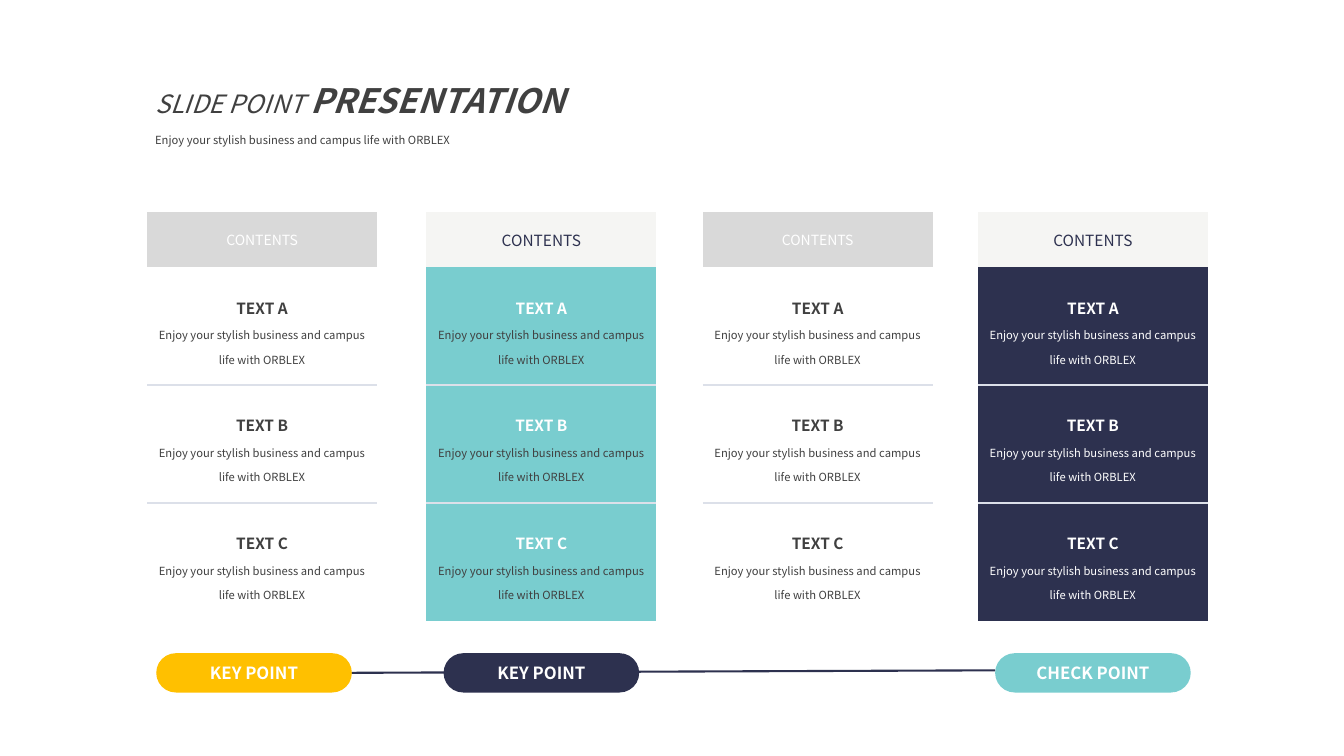
from lxml import etree
from pptx import Presentation
from pptx.dml.color import RGBColor
from pptx.enum.shapes import MSO_CONNECTOR, MSO_SHAPE
from pptx.enum.text import MSO_ANCHOR, MSO_AUTO_SIZE, PP_ALIGN
from pptx.oxml.ns import qn
from pptx.util import Inches, Pt

STRAIGHT = MSO_CONNECTOR.STRAIGHT
ROUNDED = MSO_SHAPE.ROUNDED_RECTANGLE
MIDDLE = MSO_ANCHOR.MIDDLE
CENTER = PP_ALIGN.CENTER
LEFT = PP_ALIGN.LEFT
GROW = MSO_AUTO_SIZE.SHAPE_TO_FIT_TEXT

FONT = "Noto Sans CJK KR"
NAVY, TEAL, YELLOW = "2D314F", "79CDCF", "FFC000"
WHITE, DARK, GRAY, PALE, RULE = "FFFFFF", "404040", "D9D9D9", "F5F5F3", "DCE0E9"
NO_STYLE = "{2D5ABB26-0587-4C30-8999-92F81FD0307C}"

TAGLINE = "Enjoy your stylish business and campus life with ORBLEX"
TOPICS = ["TEXT A", "TEXT B", "TEXT C"]
PLAIN = dict(header_fill=GRAY, header_color=WHITE, header_size=10,
             body_fill=None, topic_color=DARK, detail_color=DARK)
TEAL_PANEL = dict(header_fill=PALE, header_color=NAVY, header_size=11,
                  body_fill=TEAL, topic_color=WHITE, detail_color=DARK)
NAVY_PANEL = dict(TEAL_PANEL, body_fill=NAVY, detail_color=WHITE)
COLUMNS = [(1.46, PLAIN), (4.23, TEAL_PANEL), (6.97, PLAIN), (9.7, NAVY_PANEL)]


def rgb(value):
    return RGBColor.from_string(value)


def add_run(paragraph, text, size, color, bold=False, italic=False):
    run = paragraph.add_run()
    run.text = text
    font = run.font
    font.name, font.size, font.bold, font.italic = FONT, Pt(size), bold, italic
    font.color.rgb = rgb(color)


def set_paragraph(paragraph, align, spacing=None):
    paragraph.alignment = align
    paragraph.line_spacing = spacing
    return paragraph


def set_fill(target, color):
    if color:
        target.fill.solid()
        target.fill.fore_color.rgb = rgb(color)
    else:
        target.fill.background()


def add_rule(cell, side):
    border = etree.Element(qn(f"a:{side}"), w=str(Pt(1)))
    fill = etree.SubElement(border, qn("a:solidFill"))
    etree.SubElement(fill, qn("a:srgbClr"), val=RULE)
    cell._tc.get_or_add_tcPr().insert(0, border)


def add_column(slide, left, look):
    frame = slide.shapes.add_table(len(TOPICS) + 1, 1, Inches(left), Inches(2.1),
                                   Inches(2.28), Inches(4.06))
    table = frame.table
    table.first_row = table.horz_banding = False
    table._tbl.tblPr.find(qn("a:tableStyleId")).text = NO_STYLE
    table.rows[0].height = Inches(0.55)

    header = table.cell(0, 0)
    header.vertical_anchor = MIDDLE
    set_fill(header, look["header_fill"])
    heading = set_paragraph(header.text_frame.paragraphs[0], CENTER)
    add_run(heading, "CONTENTS", look["header_size"], look["header_color"])

    for row, topic in enumerate(TOPICS, start=1):
        table.rows[row].height = Inches(1.17)
        cell = table.cell(row, 0)
        cell.vertical_anchor = MIDDLE
        set_fill(cell, look["body_fill"])
        text = cell.text_frame
        title = set_paragraph(text.paragraphs[0], CENTER, 1.5)
        add_run(title, topic, 11, look["topic_color"], bold=True)
        detail = set_paragraph(text.add_paragraph(), CENTER, 1.5)
        add_run(detail, TAGLINE, 8, look["detail_color"])
        if row < len(TOPICS):
            add_rule(cell, "lnB")
        if row > 1:
            add_rule(cell, "lnT")


def add_title(slide):
    box = slide.shapes.add_textbox(Inches(1.44), Inches(0.34), Inches(4.6), Inches(1.14))
    text = box.text_frame
    text.word_wrap = True
    text.auto_size = GROW
    headline = set_paragraph(text.paragraphs[0], LEFT, 2.0)
    add_run(headline, "SLIDE POINT ", 18, DARK, italic=True)
    add_run(headline, "PRESENTATION", 24, DARK, bold=True, italic=True)
    subtitle = set_paragraph(text.add_paragraph(), LEFT, 2.0)
    add_run(subtitle, TAGLINE, 8, DARK)


def add_pill(slide, left, label, color):
    pill = slide.shapes.add_shape(ROUNDED, Inches(left), Inches(6.48),
                                  Inches(1.94), Inches(0.39))
    pill.adjustments[0] = 0.5
    pill.shadow.inherit = False
    set_fill(pill, color)
    pill.line.fill.background()
    pill.text_frame.vertical_anchor = MIDDLE
    caption = set_paragraph(pill.text_frame.paragraphs[0], CENTER)
    add_run(caption, label, 12, WHITE, bold=True)
    return pill


def add_link(slide, start):
    link = slide.shapes.add_connector(STRAIGHT, Inches(3.49), Inches(6.67),
                                      Inches(9.87), Inches(6.65))
    link.begin_connect(start, 3)
    link.line.color.rgb = rgb(NAVY)
    link.line.width = Pt(1.5)
    etree.SubElement(link._element.spPr, qn("a:effectLst"))


def main():
    deck = Presentation()
    deck.slide_width, deck.slide_height = Inches(13.33), Inches(7.5)
    slide = deck.slides.add_slide(deck.slide_layouts[6])
    add_title(slide)
    for left, look in COLUMNS:
        add_column(slide, left, look)
    first_point = add_pill(slide, 1.55, "KEY POINT", YELLOW)
    add_pill(slide, 9.87, "CHECK POINT", TEAL)
    add_link(slide, first_point)
    add_pill(slide, 4.4, "KEY POINT", NAVY)
    deck.save("out.pptx")


if __name__ == "__main__":
    main()
